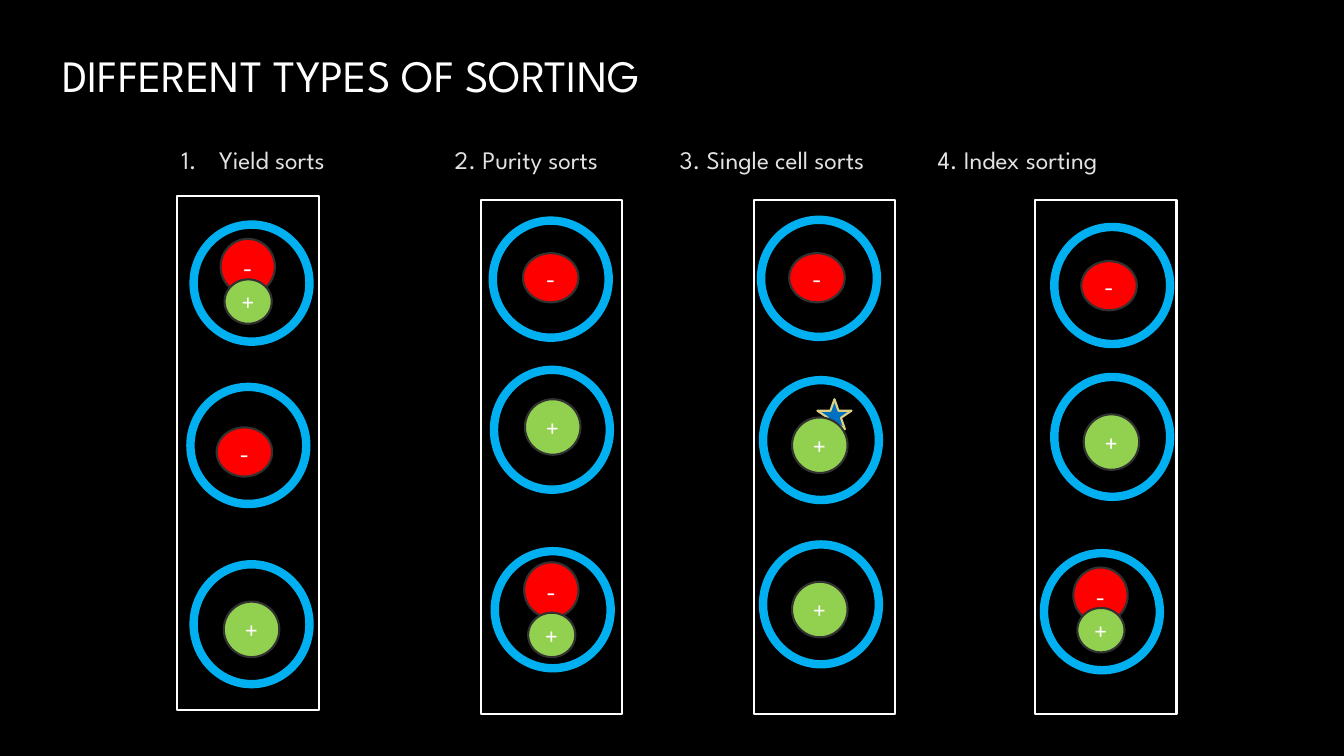
from lxml.etree import SubElement
from pptx import Presentation
from pptx.dml.color import RGBColor
from pptx.enum.shapes import MSO_SHAPE
from pptx.enum.text import MSO_ANCHOR, PP_ALIGN
from pptx.oxml.ns import qn
from pptx.util import Cm, Pt

FONT = "League Spartan"
COLORS = {
    "black": "000000", "white": "FFFFFF", "silver": "A6A6A6", "heading": "E2E2E2",
    "red": "FF0000", "green": "92D050", "cell edge": "313131", "droplet": "00B0F0",
    "star": "0070C0", "star edge": "DCD084",
}
# Kind of cell: sign, fill, width, height (cm)
CELLS = {
    "negative": ("-", "red", 1.4, 1.24),
    "positive": ("+", "green", 1.4, 1.4),
    "joined negative": ("-", "red", 1.37, 1.4),
    "joined positive": ("+", "green", 1.19, 1.12),
}
DROPLET_WIDTH = 2.92
HEADING_TOP, HEADING_HEIGHT = 3.51, 1.02
STRIP_WIDTH, STRIP_HEIGHT = 3.56, 12.95
# Each droplet: left, top, height, then its cells as (kind, left, top), all in cm
SORTS = [
    {"heading": "Yield sorts", "numbered": True, "heading_left": 4.32, "strip": (4.47, 4.95),
     "droplets": [
         (4.88, 5.66, 2.95, [("joined negative", 5.56, 6.02), ("joined positive", 5.66, 7.04)]),
         (4.8, 9.75, 2.95, [("negative", 5.46, 10.77)]),
         (4.88, 14.22, 3.02, [("positive", 5.64, 15.16)])]},
    {"heading": "2. Purity sorts", "heading_left": 11.21, "strip": (12.12, 5.05),
     "droplets": [
         (12.42, 5.56, 2.95, [("negative", 13.18, 6.38)]),
         (12.45, 9.32, 3.02, [("positive", 13.23, 10.06)]),
         (12.47, 13.89, 2.95, [("joined negative", 13.21, 14.17), ("joined positive", 13.31, 15.44)])]},
    {"heading": "3. Single cell sorts", "heading_left": 16.88, "strip": (19, 5.05),
     "star": (20.6, 10.06),
     "droplets": [
         (19.18, 5.54, 2.95, [("negative", 19.89, 6.38)]),
         (19.23, 9.58, 3.02, [("positive", 19.96, 10.52)]),
         (19.23, 13.72, 3.02, [("positive", 19.96, 14.66)])]},
    {"heading": "4. Index sorting", "heading_left": 23.38, "strip": (26.09, 5.05),
     "droplets": [
         (26.57, 5.72, 2.95, [("negative", 27.25, 6.58)]),
         (26.57, 9.5, 3.02, [("positive", 27.31, 10.44)]),
         (26.31, 13.94, 2.95, [("joined negative", 27.05, 14.3), ("joined positive", 27.15, 15.32)])]},
]


def rgb(name):
    return RGBColor.from_string(COLORS[name])


def write_text(box, text, size=18, color="white", align=PP_ALIGN.LEFT, anchor=MSO_ANCHOR.TOP):
    """Put one formatted line in the box and return its paragraph and run."""
    frame = box.text_frame
    frame.word_wrap = True
    frame.vertical_anchor = anchor
    para = frame.paragraphs[0]
    para.alignment = align
    span = para.add_run()
    span.text = text
    span.font.name = FONT
    span.font.size = Pt(size)
    span.font.color.rgb = rgb(color)
    return para, span


def add_figure(page, preset, left, top, width, height, line, weight=1.5, fill=None):
    """Add a preset shape, measured in cm; without a fill it is see-through."""
    figure = page.shapes.add_shape(preset, Cm(left), Cm(top), Cm(width), Cm(height))
    figure.shadow.inherit = False
    if fill:
        figure.fill.solid()
        figure.fill.fore_color.rgb = rgb(fill)
    else:
        figure.fill.background()
    figure.line.color.rgb = rgb(line)
    figure.line.width = Pt(weight)
    return figure


def add_title(page, text):
    box = page.shapes.add_textbox(Cm(1.32), Cm(0.64), Cm(26.92), Cm(2.49))
    _, span = write_text(box, text, size=32, anchor=MSO_ANCHOR.MIDDLE)
    fill = span.font.fill
    fill.gradient()
    fill.gradient_angle = 267
    for stop, color in zip(fill.gradient_stops, ("white", "silver")):
        stop.color.rgb = rgb(color)


def number_paragraph(para):
    """Give the paragraph an automatic number with a hanging indent."""
    properties = para._p.get_or_add_pPr()
    properties.set("marL", str(Cm(0.95)))
    properties.set("indent", str(-Cm(0.95)))
    SubElement(properties, qn("a:buFont"), typeface="+mj-lt")
    SubElement(properties, qn("a:buAutoNum"), type="arabicPeriod")


def add_heading(page, text, left, numbered=False):
    box = page.shapes.add_textbox(Cm(left), Cm(HEADING_TOP), Cm(6), Cm(HEADING_HEIGHT))
    para, _ = write_text(box, text, color="heading")
    if numbered:
        number_paragraph(para)


def add_cell(page, kind, left, top):
    sign, fill, width, height = CELLS[kind]
    cell = add_figure(page, MSO_SHAPE.OVAL, left, top, width, height, "cell edge", fill=fill)
    write_text(cell, sign, align=PP_ALIGN.CENTER, anchor=MSO_ANCHOR.MIDDLE)


def add_droplet(page, left, top, height, cells):
    for cell in cells:
        add_cell(page, *cell)
    add_figure(page, MSO_SHAPE.OVAL, left, top, DROPLET_WIDTH, height, "droplet", weight=6)


def add_sort(page, sort):
    """Add the heading, strip and droplets of one type of sorting."""
    add_heading(page, sort["heading"], sort["heading_left"], sort.get("numbered", False))
    add_figure(page, MSO_SHAPE.RECTANGLE, *sort["strip"], STRIP_WIDTH, STRIP_HEIGHT,
               "white", fill="black")
    if "star" in sort:
        add_figure(page, MSO_SHAPE.STAR_5_POINT, *sort["star"], 0.86, 0.76,
                   "star edge", fill="star")
    for droplet in sort["droplets"]:
        add_droplet(page, *droplet)


def main():
    deck = Presentation()
    deck.slide_width = Cm(33.87)
    deck.slide_height = Cm(19.05)
    page = deck.slides.add_slide(deck.slide_layouts[6])
    page.background.fill.solid()
    page.background.fill.fore_color.rgb = rgb("black")
    add_title(page, "DIFFERENT TYPES OF SORTING")
    for sort in SORTS:
        add_sort(page, sort)
    deck.save("out.pptx")


if __name__ == "__main__":
    main()
